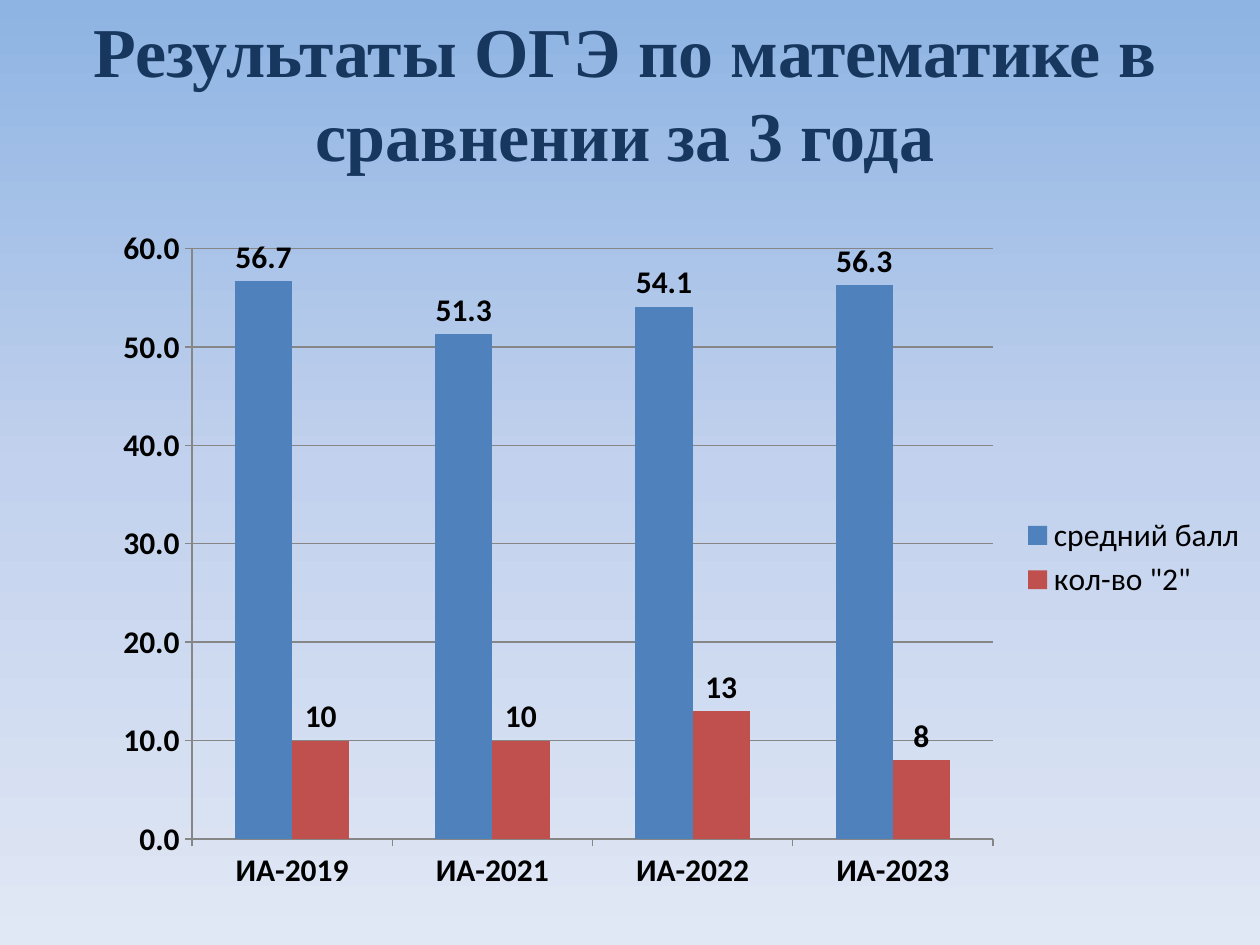
from dataclasses import dataclass

from lxml.etree import SubElement
from pptx import Presentation
from pptx.chart.data import CategoryChartData
from pptx.dml.color import RGBColor as RGB
from pptx.enum.chart import (XL_CHART_TYPE as ChartType, XL_LABEL_POSITION as LabelPos,
                             XL_LEGEND_POSITION as LegendPos, XL_TICK_MARK as Tick)
from pptx.enum.text import MSO_ANCHOR as Anchor, PP_ALIGN as Align
from pptx.oxml.ns import qn
from pptx.util import Cm, Pt


@dataclass(frozen=True)
class Theme:
    background: tuple = ((0, "8EB4E3"), (50, "C2D1ED"), (100, "E1E8F5"))
    title: str = "17375E"
    text: str = "000000"
    grid: str = "868686"
    series: tuple = ("4F81BD", "C0504D")
    title_font: str = "Times New Roman"
    chart_font: str = "Calibri"
    title_size: int = 40
    chart_size: int = 18


def add_text(tf, text, *, font, size, color, bold=False, align=Align.LEFT):
    p = tf.paragraphs[0]
    p.alignment = align
    r = p.add_run()
    r.text = text
    r.font.name, r.font.size, r.font.bold = font, Pt(size), bold
    r.font.color.rgb = RGB.from_string(color)


class SlideBuilder:
    def __init__(self, s, theme):
        self.s, self.theme = s, theme

    def background(self):
        fill = self.s.background.fill
        fill.gradient()
        fill.gradient_angle = 270  # counter-clockwise: top to bottom
        stops = self.s._element.xpath(".//a:gsLst")[0]
        for stop in list(stops):
            stops.remove(stop)
        for pos, color in self.theme.background:
            stop = SubElement(stops, qn("a:gs"), pos=str(pos * 1000))
            SubElement(stop, qn("a:srgbClr"), val=color)

    def title(self, text, left, top, width, height):
        t = self.theme
        tf = self.s.shapes.add_textbox(left, top, width, height).text_frame
        tf.word_wrap = True
        tf.vertical_anchor = Anchor.MIDDLE
        add_text(tf, text, font=t.title_font, size=t.title_size, color=t.title,
                 bold=True, align=Align.CENTER)

    def column_chart(self, cats, series, left, top, width, height, plot):
        t = self.theme
        data = CategoryChartData()
        data.categories = cats
        for name, values, fmt in series:
            data.add_series(name, values, number_format=fmt)
        chart = self.s.shapes.add_chart(ChartType.COLUMN_CLUSTERED, left, top,
                                        width, height, data).chart
        chart.has_title = False
        chart.font.name, chart.font.size = t.chart_font, Pt(t.chart_size)
        chart.font.color.rgb = RGB.from_string(t.text)

        # Legend
        chart.has_legend = True
        chart.legend.position = LegendPos.RIGHT
        chart.legend.include_in_layout = False

        # Axes
        val = chart.value_axis
        val.minimum_scale, val.maximum_scale, val.major_unit = 0, 60, 10
        val.tick_labels.number_format = "0.0"
        val.tick_labels.number_format_is_linked = False
        val.has_major_gridlines = True
        for axis in (chart.category_axis, val):
            axis.major_tick_mark = Tick.OUTSIDE
            axis.tick_labels.font.bold = True
            axis.tick_labels.font.size = Pt(t.chart_size)
        for line in (chart.category_axis.format.line, val.format.line,
                     val.major_gridlines.format.line):
            line.color.rgb = RGB.from_string(t.grid)
            line.width = Pt(0.75)

        # Columns and their labels
        bars = chart.plots[0]
        bars.gap_width, bars.overlap, bars.vary_by_categories = 150, 0, False
        for ser, color, (_, _, fmt) in zip(bars.series, t.series, series):
            ser.format.fill.solid()
            ser.format.fill.fore_color.rgb = RGB.from_string(color)
            labels = ser.data_labels
            labels.show_value = True
            labels.position = LabelPos.OUTSIDE_END
            labels.number_format, labels.number_format_is_linked = fmt, False
            labels.font.bold, labels.font.size = True, Pt(t.chart_size)

        # Inner plot area, as fractions of the chart
        area = chart._chartSpace.chart.plotArea
        layout = area.find(qn("c:layout"))
        if layout is None:
            layout = SubElement(area, qn("c:layout"))
            area.insert(0, layout)
        manual = SubElement(layout, qn("c:manualLayout"))
        settings = {"layoutTarget": "inner", "xMode": "edge", "yMode": "edge",
                    **dict(zip("xywh", plot))}
        for tag, value in settings.items():
            SubElement(manual, qn(f"c:{tag}"), val=str(value))


def main():
    prs = Presentation()
    prs.slide_width, prs.slide_height = Cm(25.4), Cm(19.05)
    b = SlideBuilder(prs.slides.add_slide(prs.slide_layouts[6]), Theme())
    b.background()
    b.column_chart(
        ["ИА-2019", "ИА-2021", "ИА-2022", "ИА-2023"],
        [("средний балл", (56.7, 51.3, 54.1, 56.3), "0.0"),
         ('кол-во "2"', (10, 10, 13, 8), "General")],
        Cm(2), Cm(4.32), Cm(23.4), Cm(13.84), plot=(0.08, 0.05, 0.69, 0.86))
    b.title("Результаты ОГЭ по математике в сравнении за 3 года",
            Cm(1.3), Cm(0), Cm(22.6), Cm(3.68))
    prs.save("out.pptx")


if __name__ == "__main__":
    main()
